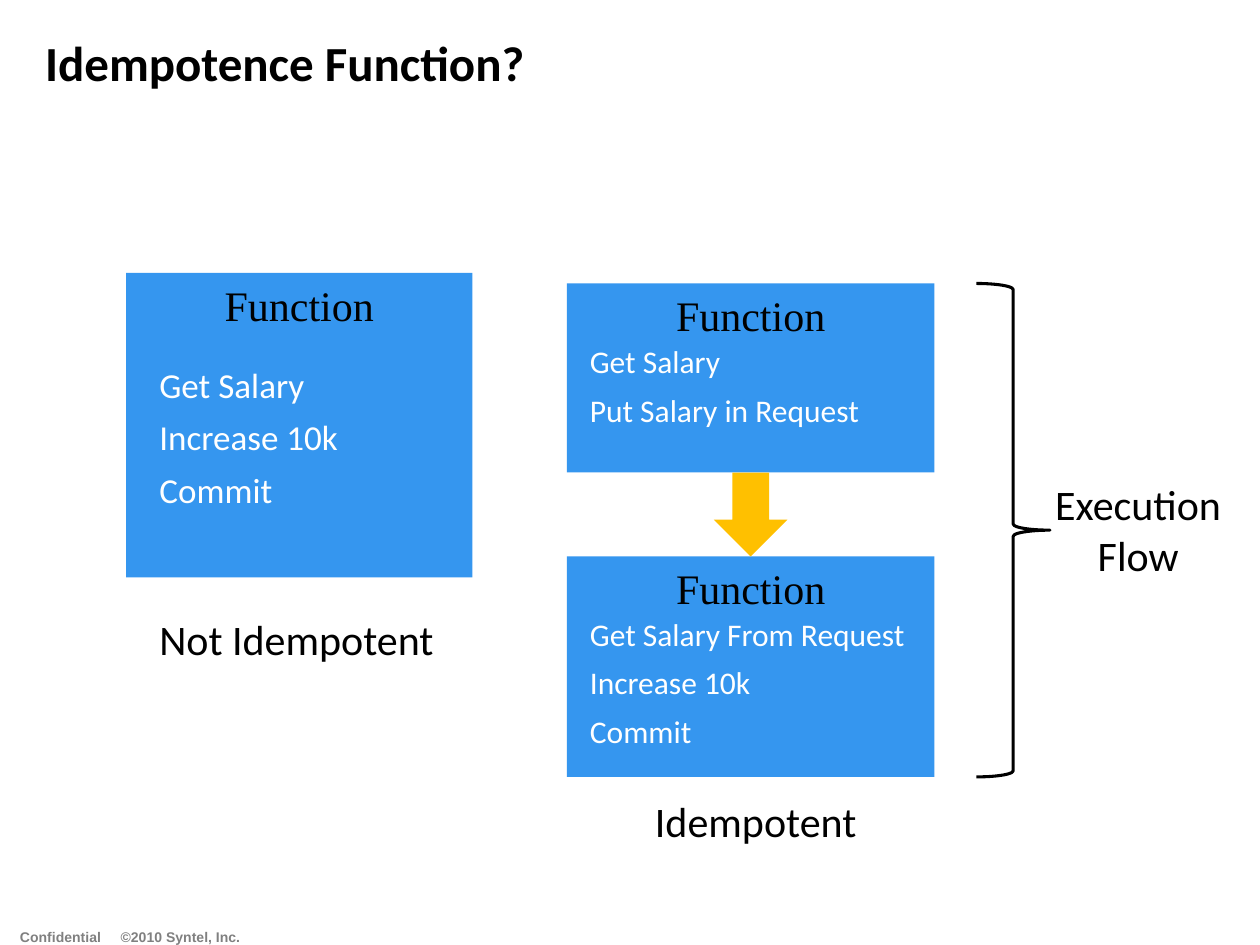
from lxml.etree import SubElement
from pptx import Presentation
from pptx.dml.color import RGBColor
from pptx.enum.shapes import MSO_SHAPE
from pptx.enum.text import MSO_ANCHOR, PP_ALIGN
from pptx.oxml.ns import qn
from pptx.util import Inches, Pt

COLORS = {"black": "000000", "white": "FFFFFF", "blue": "3596EF",
          "amber": "FFC000", "gray": "808080"}
COLUMNS, ROWS = 120, 90
WIDTH, HEIGHT = Inches(10), Inches(7.5)


def color(name):
    """Return the named palette colour."""
    return RGBColor.from_string(COLORS[name])


def grid(left, top, width, height):
    """Turn grid columns and rows into slide lengths."""
    return (round(left * WIDTH / COLUMNS), round(top * HEIGHT / ROWS),
            round(width * WIDTH / COLUMNS), round(height * HEIGHT / ROWS))


def write(frame, *lines, size=24, font="Calibri", ink="black", bold=False,
          align=PP_ALIGN.LEFT, anchor=MSO_ANCHOR.TOP, after=0, wrap=True):
    """Fill a text frame with one formatted paragraph per line."""
    frame.word_wrap = wrap
    frame.vertical_anchor = anchor
    frame.text = "\n".join(lines)
    for paragraph in frame.paragraphs:
        paragraph.alignment = align
        paragraph.space_after = Pt(after)
        for run in paragraph.runs:
            run.font.size = Pt(size)
            run.font.name = font
            run.font.bold = bold
            run.font.color.rgb = color(ink)


def add_text(slide, area, *lines, **style):
    """Add a text box and return its text frame."""
    frame = slide.shapes.add_textbox(*grid(*area)).text_frame
    write(frame, *lines, **style)
    return frame


def add_figure(slide, kind, area, fill=None, line=None):
    """Add a flat preset shape with an optional fill and outline."""
    shape = slide.shapes.add_shape(kind, *grid(*area))
    shape.shadow.inherit = False
    if fill:
        shape.fill.solid()
        shape.fill.fore_color.rgb = color(fill)
    else:
        shape.fill.background()
    if line:
        shape.line.color.rgb = color(line)
        shape.line.width = Pt(1.75)
    else:
        shape.line.fill.background()
    return shape


def add_function(slide, area, steps_area, steps, size):
    """Add a function block with its heading and steps."""
    block = add_figure(slide, MSO_SHAPE.RECTANGLE, area, fill="blue")
    write(block.text_frame, "Function", font="Times New Roman", align=PP_ALIGN.CENTER)
    add_text(slide, steps_area, *steps, size=size, ink="white", after=6)


def add_title(slide, text):
    """Place and format the title placeholder."""
    title = slide.shapes.title
    title.left, title.top, title.width, title.height = grid(3.1, 0.4, 115, 10.9)
    write(title.text_frame, text, size=28, bold=True, anchor=MSO_ANCHOR.MIDDLE)


def add_footer(slide):
    """Add the footer line with a right tab stop."""
    frame = add_text(slide, (1.3, 87.5, 27.7, 2.5), "Confidential\t©2010 Syntel, Inc.",
                     size=8, font="Arial", ink="gray", bold=True, anchor=MSO_ANCHOR.BOTTOM)
    frame.margin_left = Inches(0.05)
    frame.margin_top = frame.margin_right = frame.margin_bottom = 0
    paragraph = frame.paragraphs[0]
    paragraph.line_spacing = 0.85
    tabs = SubElement(paragraph._p.get_or_add_pPr(), qn("a:tabLst"))
    SubElement(tabs, qn("a:tab"), pos=str(Inches(1.75)), algn="r")


def main():
    """Build and save the slide."""
    presentation = Presentation()
    presentation.slide_width, presentation.slide_height = WIDTH, HEIGHT
    slide = presentation.slides.add_slide(presentation.slide_layouts[5])

    add_footer(slide)
    add_title(slide, "Idempotence Function?")

    update = ("Increase 10k", "Commit")
    add_function(slide, (12, 26, 33, 29), (14, 34, 20, 15.4), ("Get Salary", *update), 20)
    add_function(slide, (54, 27, 35, 18), (55, 32, 30, 9.5),
                 ("Get Salary", "Put Salary in Request"), 18)
    add_function(slide, (54, 53, 35, 21), (55, 58, 33, 14.2),
                 ("Get Salary From Request", *update), 18)
    add_figure(slide, MSO_SHAPE.DOWN_ARROW, (68, 45, 7, 8), fill="amber")
    add_figure(slide, MSO_SHAPE.RIGHT_BRACE, (93, 27, 7, 47), line="black")

    add_text(slide, (14, 57.8, 28.8, 6), "Not Idempotent", wrap=False)
    add_text(slide, (61.2, 75.2, 21.8, 6), "Idempotent", wrap=False)
    add_text(slide, (99.2, 45, 18.4, 10.9), "Execution", "Flow",
             align=PP_ALIGN.CENTER, wrap=False)
    presentation.save("out.pptx")


if __name__ == "__main__":
    main()
